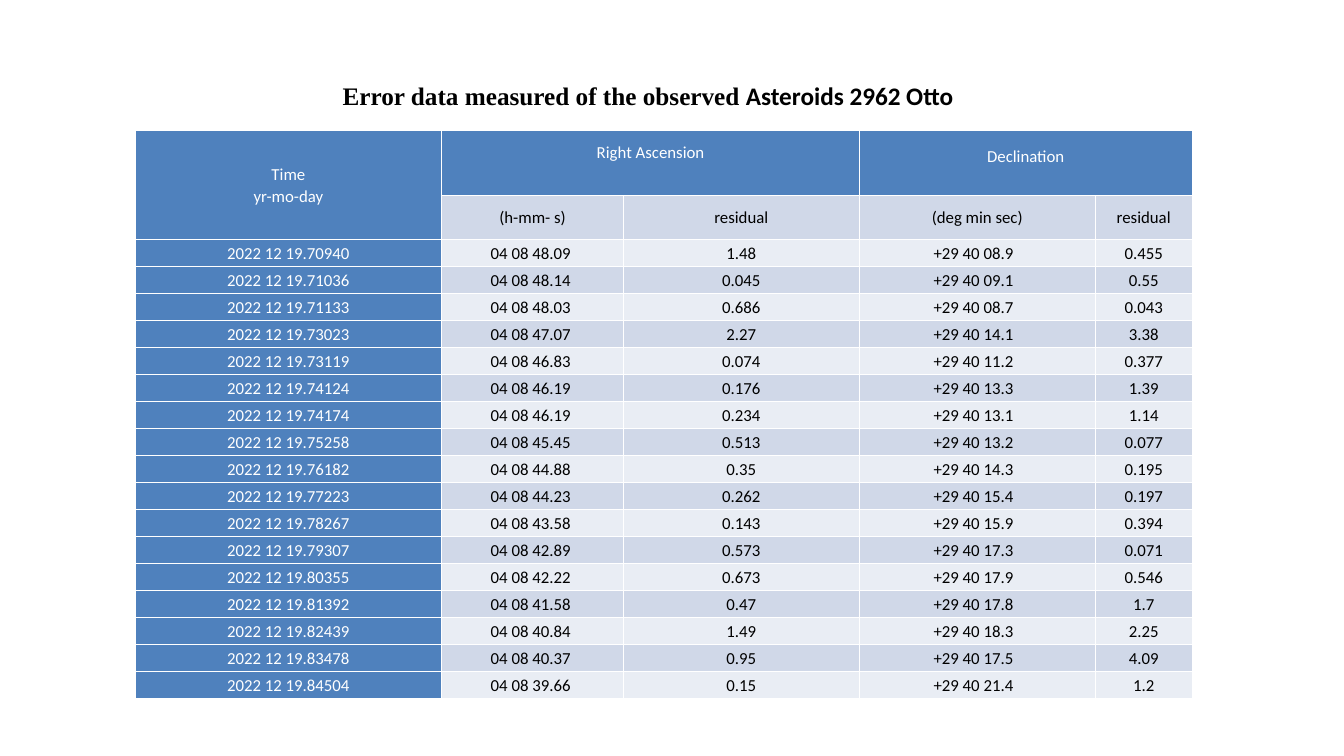
"""Build a slide with the table of error data measured for asteroid 2962 Otto."""
from typing import NamedTuple

from lxml import etree
from pptx import Presentation
from pptx import util as u
from pptx.dml.color import RGBColor
from pptx.enum import text
from pptx.oxml import ns

BLUE = RGBColor(0x4F, 0x81, 0xBD)
DARK = RGBColor(0xD0, 0xD8, 0xE8)
PALE = RGBColor(0xE9, 0xED, 0xF4)
WHITE = RGBColor(0xFF, 0xFF, 0xFF)
BLACK = RGBColor(0, 0, 0)

WIDTHS = (11.6, 6.86, 8.92, 8.92, 3.66)
HEAD, UNITS, ROW = 2.46, 1.64, 1.02
PAD = 0.28
INDENTS = (0, 0.14, 0, 0.29, 0)


class Style(NamedTuple):
    """Look of one cell, with extra right and bottom margins in centimetres."""
    fill: RGBColor
    color: RGBColor
    right: float = 0
    bottom: float = 0
    lead: float = 1.07


class Group(NamedTuple):
    """Merged header cell."""
    label: str
    col: int
    rows: int
    cols: int
    style: Style


class Datum(NamedTuple):
    """One observation with its residuals."""
    time: str
    ascent: str
    error: str
    decline: str
    miss: str


GROUPS = (
    Group("Time\nyr-mo-day", 0, 2, 1, Style(BLUE, WHITE)),
    Group("Right Ascension", 1, 1, 2, Style(BLUE, WHITE, bottom=0.83)),
    Group("Declination", 3, 1, 2, Style(BLUE, WHITE, bottom=0.83, lead=1.5)),
)
LABELS = ("(h-mm- s)", "residual", "(deg min sec)", "residual")
DATA = (
    Datum("2022 12 19.70940", "04 08 48.09", "1.48", "+29 40 08.9", "0.455"),
    Datum("2022 12 19.71036", "04 08 48.14", "0.045", "+29 40 09.1", "0.55"),
    Datum("2022 12 19.71133", "04 08 48.03", "0.686", "+29 40 08.7", "0.043"),
    Datum("2022 12 19.73023", "04 08 47.07", "2.27", "+29 40 14.1", "3.38"),
    Datum("2022 12 19.73119", "04 08 46.83", "0.074", "+29 40 11.2", "0.377"),
    Datum("2022 12 19.74124", "04 08 46.19", "0.176", "+29 40 13.3", "1.39"),
    Datum("2022 12 19.74174", "04 08 46.19", "0.234", "+29 40 13.1", "1.14"),
    Datum("2022 12 19.75258", "04 08 45.45", "0.513", "+29 40 13.2", "0.077"),
    Datum("2022 12 19.76182", "04 08 44.88", "0.35", "+29 40 14.3", "0.195"),
    Datum("2022 12 19.77223", "04 08 44.23", "0.262", "+29 40 15.4", "0.197"),
    Datum("2022 12 19.78267", "04 08 43.58", "0.143", "+29 40 15.9", "0.394"),
    Datum("2022 12 19.79307", "04 08 42.89", "0.573", "+29 40 17.3", "0.071"),
    Datum("2022 12 19.80355", "04 08 42.22", "0.673", "+29 40 17.9", "0.546"),
    Datum("2022 12 19.81392", "04 08 41.58", "0.47", "+29 40 17.8", "1.7"),
    Datum("2022 12 19.82439", "04 08 40.84", "1.49", "+29 40 18.3", "2.25"),
    Datum("2022 12 19.83478", "04 08 40.37", "0.95", "+29 40 17.5", "4.09"),
    Datum("2022 12 19.84504", "04 08 39.66", "0.15", "+29 40 21.4", "1.2"),
)


def set_font(run, name: str, size: float, color: RGBColor, bold: bool = False) -> None:
    run.font.name = name
    run.font.size = u.Pt(size)
    run.font.color.rgb = color
    run.font.bold = bold


def add_edges(cell) -> None:
    props = cell._tc.get_or_add_tcPr()
    for side in "LRTB":
        line = etree.SubElement(props, ns.qn(f"a:ln{side}"), w=str(u.Pt(1)))
        solid = etree.SubElement(line, ns.qn("a:solidFill"))
        etree.SubElement(solid, ns.qn("a:srgbClr"), val=str(WHITE))


def fill_cell(cell, words: str, style: Style) -> None:
    cell.fill.solid()
    cell.fill.fore_color.rgb = style.fill
    cell.vertical_anchor = text.MSO_ANCHOR.MIDDLE
    cell.margin_left, cell.margin_right = u.Cm(PAD), u.Cm(PAD + style.right)
    cell.margin_top, cell.margin_bottom = u.Cm(0), u.Cm(style.bottom)
    cell.text_frame.text = words
    for para in cell.text_frame.paragraphs:
        para.alignment = text.PP_ALIGN.CENTER
        para.line_spacing = style.lead
        for run in para.runs:
            set_font(run, "Calibri", 18, style.color)


def add_grid(slide) -> None:
    heights = (HEAD, UNITS) + (ROW,) * len(DATA)
    frame = slide.shapes.add_table(
        len(heights), len(WIDTHS), u.Cm(5.1), u.Cm(4.93),
        u.Cm(sum(WIDTHS)), u.Cm(sum(heights)))
    grid = frame.table
    for col, width in zip(grid.columns, WIDTHS):
        col.width = u.Cm(width)
    for row, height in zip(grid.rows, heights):
        row.height = u.Cm(height)
    for cell in grid.iter_cells():
        add_edges(cell)
    for group in GROUPS:
        first = grid.cell(0, group.col)
        first.merge(grid.cell(group.rows - 1, group.col + group.cols - 1))
        fill_cell(first, group.label, group.style)
    for col, label in enumerate(LABELS, 1):
        fill_cell(grid.cell(1, col), label, Style(DARK, BLACK))
    for row, datum in enumerate(DATA, 2):
        band = DARK if row % 2 else PALE
        for col, words in enumerate(datum):
            fill, color = (band, BLACK) if col else (BLUE, WHITE)
            fill_cell(grid.cell(row, col), words, Style(fill, color, INDENTS[col]))


def add_title(slide) -> None:
    box = slide.shapes.add_textbox(u.Cm(12.7), u.Cm(2.92), u.Cm(25.4), u.Cm(1.42))
    box.text_frame.word_wrap = True
    para = box.text_frame.paragraphs[0]
    for words, name in (("Error data measured of the observed ", "Times New Roman"),
                        ("Asteroids 2962 Otto", "Calibri")):
        run = para.add_run()
        run.text = words
        set_font(run, name, 27, BLACK, True)


def main() -> None:
    deck = Presentation()
    deck.slide_width, deck.slide_height = u.Cm(50.8), u.Cm(28.58)
    slide = deck.slides.add_slide(deck.slide_layouts[6])
    add_grid(slide)
    add_title(slide)
    deck.save("out.pptx")


if __name__ == "__main__":
    main()
